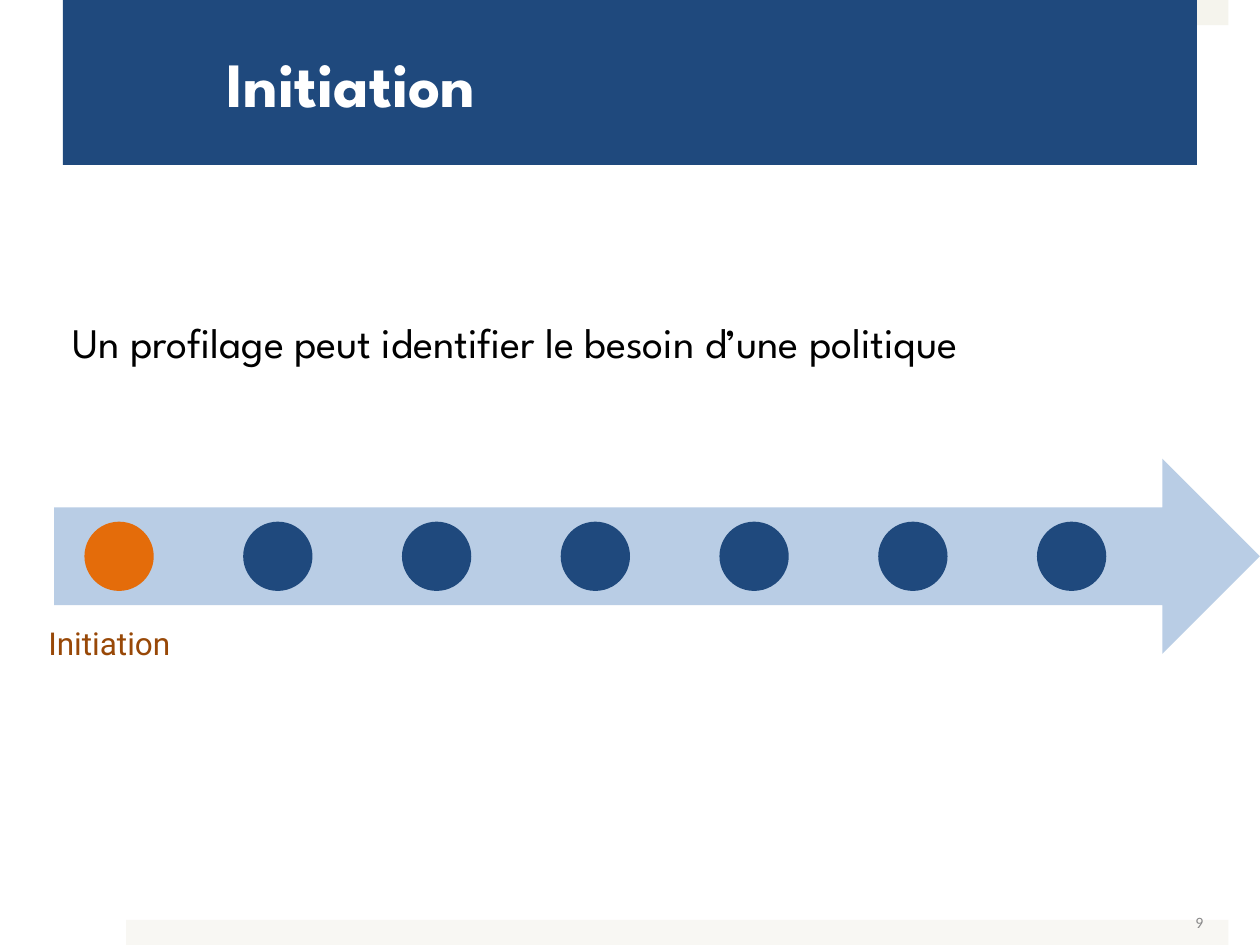
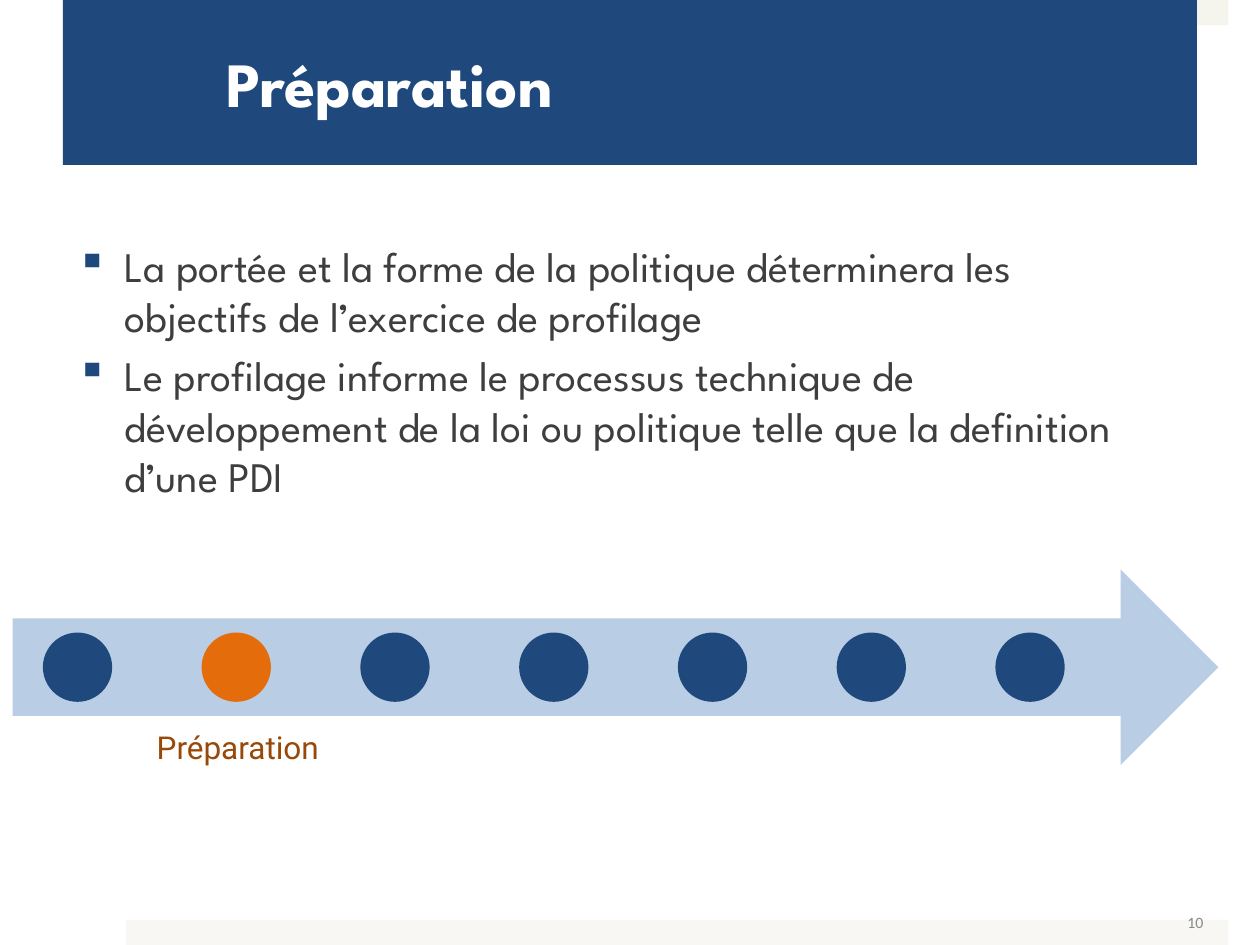
from dataclasses import dataclass
from typing import NamedTuple

from lxml.etree import SubElement
from pptx import Presentation
from pptx.dml.color import RGBColor
from pptx.enum.shapes import MSO_SHAPE
from pptx.enum.text import MSO_ANCHOR, MSO_AUTO_SIZE, PP_ALIGN
from pptx.oxml.ns import qn
from pptx.util import Emu, Pt

SCALE = 9144  # 100 px to the inch


@dataclass(frozen=True)
class Theme:
    navy: str = "1F497D"
    sky: str = "B9CDE5"
    orange: str = "E46C0A"
    brown: str = "984807"
    white: str = "FFFFFF"
    black: str = "000000"
    dark: str = "3E3E3E"
    grey: str = "898989"
    cream: str = "F5F4ED"
    pale: str = "F8F7F3"
    head: str = "League Spartan"
    tag: str = "Roboto"
    num: str = "Calibri"
    title: int = 36
    body: int = 24
    label: int = 18
    small: int = 9


T = Theme()


class Box(NamedTuple):
    x: int
    y: int
    w: int
    h: int


class Font(NamedTuple):
    name: str
    size: int
    color: str
    bold: bool = False


class Step(NamedTuple):
    title: str
    page: int
    lines: list[str]
    color: str
    bullet: bool
    body: Box
    arrow: Box
    active: int
    label: Box


STEPS = [
    Step("Initiation", 9,
         ["Un profilage peut identifier le besoin d’une politique"],
         T.black, False, Box(48, 246, 849, 338),
         Box(43, 364, 957, 155), 0, Box(23, 490, 122, 40)),
    Step("Préparation", 10,
         ["La portée et la forme de la politique déterminera les objectifs "
          "de l’exercice de profilage",
          "Le profilage informe le processus technique de développement de "
          "la loi ou politique telle que la definition d’une PDI"],
         T.dark, True, Box(51, 186, 849, 338),
         Box(10, 452, 957, 155), 1, Box(113, 573, 150, 40)),
]
DOTS, DOT, PITCH, INSET = 7, 55, 126, 24


def px(n: int) -> Emu:
    return Emu(n * SCALE)


def place(box: Box) -> list[Emu]:
    return [px(n) for n in box]


def draw(shapes, kind: MSO_SHAPE, box: Box, color: str):
    shape = shapes.add_shape(kind, *place(box))
    shape.shadow.inherit = False
    shape.fill.solid()
    shape.fill.fore_color.rgb = RGBColor.from_string(color)
    shape.line.fill.background()
    return shape


def mark(para) -> None:
    """Give a paragraph a square bullet with a hanging indent."""
    props = para._p.get_or_add_pPr()
    props.set("marL", str(px(38)))
    props.set("indent", str(px(-38)))
    tint = SubElement(props, qn("a:buClr"))
    SubElement(tint, qn("a:srgbClr"), val=T.navy)
    SubElement(props, qn("a:buChar"), char="▪")


def write(frame, lines: list[str], font: Font, align=PP_ALIGN.LEFT,
          bullet: bool = False) -> None:
    frame.word_wrap = True
    for i, line in enumerate(lines):
        para = frame.add_paragraph() if i else frame.paragraphs[0]
        if bullet:
            mark(para)
        para.alignment = align
        if i:
            para.space_before = Pt(font.size * 0.2)
        run = para.add_run()
        run.text = line
        run.font.name = font.name
        run.font.size = Pt(font.size)
        run.font.bold = font.bold
        run.font.color.rgb = RGBColor.from_string(font.color)


def pad(frame, left: int, top: int, right: int, base: int) -> None:
    frame.margin_left, frame.margin_top = px(left), px(top)
    frame.margin_right, frame.margin_bottom = px(right), px(base)
    frame.vertical_anchor = MSO_ANCHOR.MIDDLE


def add_frame(slide, title: str, page: int) -> None:
    # Edge bands
    for y, color in ((0, T.cream), (730, T.pale)):
        draw(slide.shapes, MSO_SHAPE.RECTANGLE, Box(100, y, 875, 20), color)
    # Page number
    frame = slide.shapes.add_textbox(*place(Box(729, 712, 233, 40))).text_frame
    pad(frame, 7, 4, 7, 4)
    write(frame, [str(page)], Font(T.num, T.small, T.grey), PP_ALIGN.RIGHT)
    # Title band
    band = draw(slide.shapes, MSO_SHAPE.RECTANGLE, Box(50, 0, 900, 131), T.navy)
    pad(band.text_frame, 130, 5, 30, 5)
    write(band.text_frame, [title], Font(T.head, T.title, T.white, True))


def add_track(slide, arrow: Box, active: int) -> None:
    group = slide.shapes.add_group_shape().shapes
    draw(group, MSO_SHAPE.RIGHT_ARROW, arrow, T.sky)
    y = arrow.y + (arrow.h - DOT) // 2
    for i in range(DOTS):
        dot = Box(arrow.x + INSET + i * PITCH, y, DOT, DOT)
        draw(group, MSO_SHAPE.OVAL, dot, T.orange if i == active else T.navy)


def add_step(deck, step: Step) -> None:
    slide = deck.slides.add_slide(deck.slide_layouts[6])
    add_frame(slide, step.title, step.page)
    add_track(slide, step.arrow, step.active)
    # Label under the active dot
    label = slide.shapes.add_textbox(*place(step.label)).text_frame
    write(label, [step.title], Font(T.tag, T.label, T.brown), PP_ALIGN.RIGHT)
    label.auto_size = MSO_AUTO_SIZE.SHAPE_TO_FIT_TEXT
    # Body text
    body = slide.shapes.add_textbox(*place(step.body)).text_frame
    write(body, step.lines, Font(T.head, T.body, step.color),
          bullet=step.bullet)


def main() -> None:
    deck = Presentation()
    deck.slide_width, deck.slide_height = px(1000), px(750)
    for step in STEPS:
        add_step(deck, step)
    deck.save("out.pptx")


if __name__ == "__main__":
    main()
